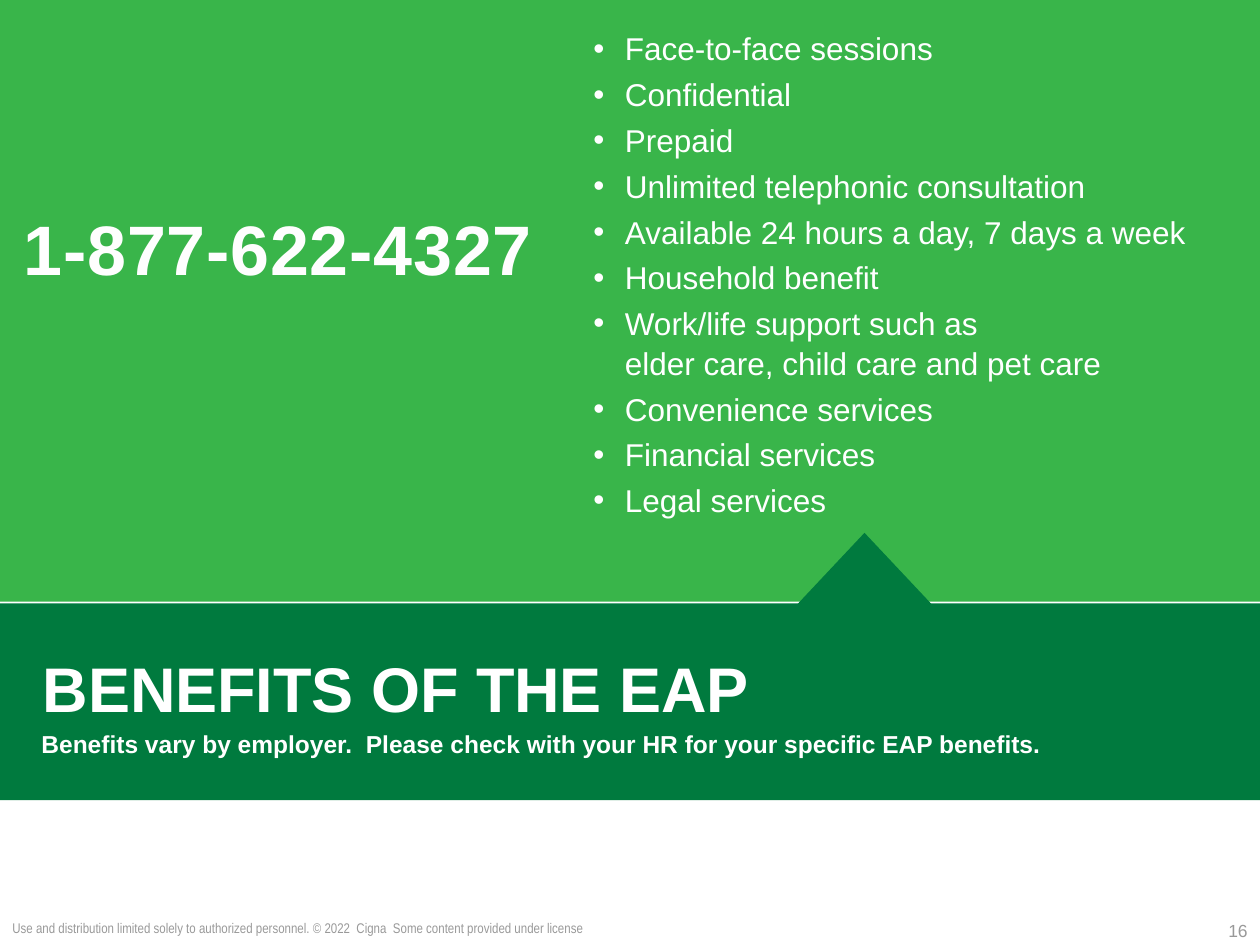
from lxml.etree import SubElement
from pptx import Presentation
from pptx.dml.color import RGBColor
from pptx.enum.shapes import MSO_SHAPE
from pptx.enum.text import MSO_ANCHOR, PP_ALIGN
from pptx.oxml import parse_xml
from pptx.oxml.ns import nsdecls, qn
from pptx.util import Pt

# Content
PHONE = "1-877-622-4327"
BENEFITS = [
    "Face-to-face sessions",
    "Confidential",
    "Prepaid",
    "Unlimited telephonic consultation",
    "Available 24 hours a day, 7 days a week",
    "Household benefit",
    "Work/life support such as\velder care, child care and pet care",
    "Convenience services",
    "Financial services",
    "Legal services",
]
TITLE = "BENEFITS OF THE EAP"
NOTE = "Benefits vary by employer.  Please check with your HR for your specific EAP benefits."
FOOTER = ("Use and distribution limited solely to authorized personnel. "
          "© 2022  Cigna  Some content provided under license")
PAGE = "16"

THEME = {
    "light": "39B54A", "dark": "007A3E", "white": "FFFFFF",
    "phone": "FEFEFE", "outline": "4F81BD", "grey": "999999",
    "font": "Arial", "narrow": "Arial Narrow",
    "phone_size": 40, "title_size": 36, "list_size": 18,
    "note_size": 14, "page_size": 10, "footer_size": 8,
}

WIDTH, HEIGHT = 720, 540
INDENT = 18

prs = Presentation()
prs.slide_width, prs.slide_height = Pt(WIDTH), Pt(HEIGHT)
s = prs.slides.add_slide(prs.slide_layouts[6])


def add_block(kind, left, top, width, height, color):
    sp = s.shapes.add_shape(kind, Pt(left), Pt(top), Pt(width), Pt(height))
    sp.shadow.inherit = False
    sp.fill.solid()
    sp.fill.fore_color.rgb = RGBColor.from_string(THEME[color])
    sp.line.fill.background()


def add_text(box, lines, size, color, bold=False, align=PP_ALIGN.LEFT,
             font="font", bullets=False):
    tf = s.shapes.add_textbox(*map(Pt, box)).text_frame
    tf.word_wrap = True
    tf.vertical_anchor = MSO_ANCHOR.TOP
    for i, line in enumerate(lines):
        p = tf.paragraphs[0] if i == 0 else tf.add_paragraph()
        p.text = line
        p.alignment = align
        if bullets:
            add_bullet(p, color)
            p.line_spacing = 1.05
            if i:
                p.space_before = Pt(3.5)
        for r in p.runs:
            r.font.name = THEME[font]
            r.font.size = Pt(THEME[size])
            r.font.bold = bold
            r.font.color.rgb = RGBColor.from_string(THEME[color])
    return tf.paragraphs[0]


def add_bullet(p, color):
    pPr = p._p.get_or_add_pPr()
    pPr.set("marL", str(Pt(INDENT)))
    pPr.set("indent", str(-Pt(INDENT)))
    clr = SubElement(pPr, qn("a:buClr"))
    SubElement(clr, qn("a:srgbClr")).set("val", THEME[color])
    SubElement(pPr, qn("a:buFont")).set("typeface", THEME["font"])
    SubElement(pPr, qn("a:buChar")).set("char", "•")


def add_glow_edge(r):
    """Give a run a thin outline, a soft shadow and wider letter spacing."""
    rPr = r.font._element
    rPr.set("spc", "50")
    color = f'<a:srgbClr val="{THEME["outline"]}"/>'
    rPr.insert(0, parse_xml(
        f'<a:ln {nsdecls("a")} w="{Pt(0.75)}"><a:solidFill>{color}</a:solidFill></a:ln>'))
    rPr.find(qn("a:solidFill")).addnext(parse_xml(
        f'<a:effectLst {nsdecls("a")}><a:outerShdw blurRad="{Pt(3)}" dist="{Pt(2)}" '
        f'dir="2700000">{color}</a:outerShdw></a:effectLst>'))


# Colour bands, with a hairline gap, and the pointer
add_block(MSO_SHAPE.RECTANGLE, 0, 0, WIDTH, 343.8, "light")
add_block(MSO_SHAPE.RECTANGLE, 0, 344.8, WIDTH, 112.4, "dark")
add_block(MSO_SHAPE.ISOSCELES_TRIANGLE, 431, 304.5, 126, 67, "dark")

# Title and note
title = add_text((17.3, 365.8, 565, 60.5), [TITLE], "title_size", "white", bold=True)
title.line_spacing = Pt(45)
add_text((8, 413, 603, 24.5), [NOTE], "note_size", "white", bold=True,
         align=PP_ALIGN.CENTER)

# Phone number and benefit list
phone = add_text((0, 113.8, 318, 55.4), [PHONE], "phone_size", "phone", bold=True,
                 align=PP_ALIGN.CENTER)
add_glow_edge(phone.runs[0])
add_text((332, 12.2, 359, 322.5), BENEFITS, "list_size", "white", bullets=True)

# Footer and page number
add_text((0, 522, 552, 18), [FOOTER], "footer_size", "grey", font="narrow")
add_text((552, 522, 168, 16.5), [PAGE], "page_size", "grey", align=PP_ALIGN.RIGHT)

prs.save("out.pptx")
